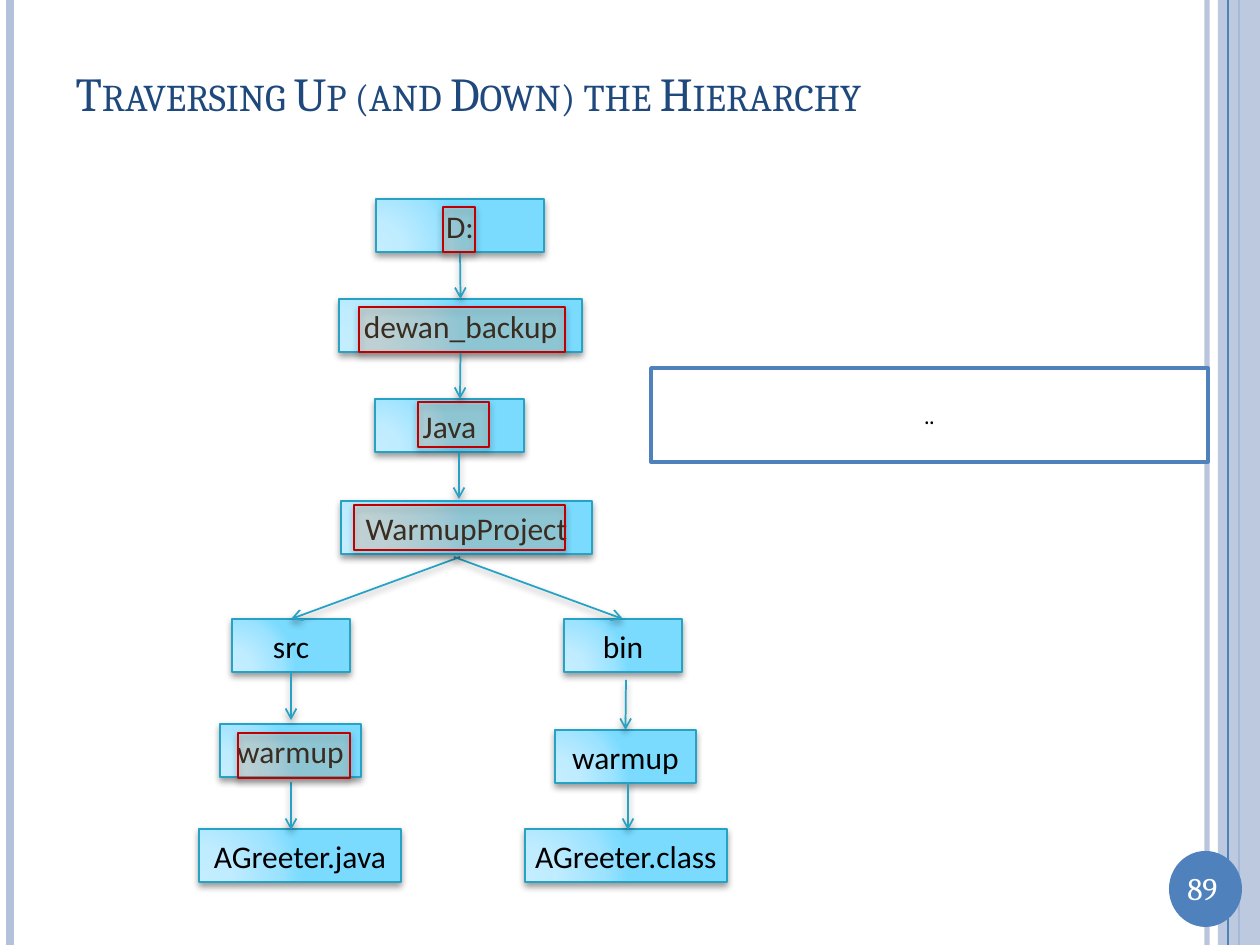
from lxml import etree
from pptx import Presentation
from pptx.dml.color import RGBColor
from pptx.enum.shapes import MSO_CONNECTOR, MSO_SHAPE
from pptx.enum.text import MSO_ANCHOR, MSO_AUTO_SIZE, PP_ALIGN
from pptx.oxml import parse_xml
from pptx.oxml.ns import qn
from pptx.util import Emu, Pt

STRAIGHT = MSO_CONNECTOR.STRAIGHT
RECTANGLE = MSO_SHAPE.RECTANGLE
OVAL = MSO_SHAPE.OVAL
MIDDLE = MSO_ANCHOR.MIDDLE
CENTER = PP_ALIGN.CENTER
LEFT = PP_ALIGN.LEFT
NO_AUTOFIT = MSO_AUTO_SIZE.NONE

WHITE = RGBColor(0xFF, 0xFF, 0xFF)
BLACK = RGBColor(0, 0, 0)
NAVY = RGBColor(0x1F, 0x49, 0x7D)
BLUE = RGBColor(0x4F, 0x81, 0xBD)
PALE_BLUE = RGBColor(0xB3, 0xC1, 0xDB)
TEAL = RGBColor(0x26, 0xA2, 0xC4)
PEACH = RGBColor(0xFA, 0xC0, 0x90)
RED = RGBColor(0xC0, 0, 0)
NODE_STOPS = [
    (0, RGBColor(0xC4, 0xEE, 0xFF)),
    (30, RGBColor(0xBF, 0xEC, 0xFF)),
    (75, RGBColor(0x9D, 0xE3, 0xFF)),
    (100, RGBColor(0x7A, 0xDB, 0xFF)),
]

HEADING_FONT = "Cambria"
NODE_FONT = "Calibri"
EMU_PER_PX = 914400 / 126
SLIDE_WIDTH, SLIDE_HEIGHT = 1260, 945
NODE_HEIGHT = 53
HIGHLIGHT_HEIGHT = 45
DRAWING_NS = 'xmlns:a="http://schemas.openxmlformats.org/drawingml/2006/main"'

EDGE_LINES = [
    (1207, PALE_BLUE, 3, 93),
    (10, PALE_BLUE, 4.5, 100),
    (1239, BLUE, 1.5, 100),
]
NODES = {
    "drive": ("D:", 376, 199, 168),
    "backup": ("dewan_backup", 339, 299, 243),
    "java": ("Java", 375, 399, 149),
    "src": ("src", 232, 619, 118),
    "src_package": ("warmup", 220, 724, 141),
    "source_file": ("AGreeter.java", 199, 829, 202),
    "class_file": ("AGreeter.class", 525, 829, 202),
    "bin_package": ("warmup", 555, 730, 141),
    "bin": ("bin", 564, 619, 118),
}
PROJECT = ("WarmupProject", 341, 501, 251)
ARROWS = [
    ((460, 251), (460, 299), "drive", "backup"),
    ((460, 352), (460, 399), "backup", None),
    ((459, 451), (459, 499), None, None),
    ((460, 557), (291, 619), None, "src"),
    ((454, 557), (623, 619), None, "bin"),
    ((291, 672), (291, 720), "src", None),
    ((626, 680), (626, 729), None, "bin_package"),
    ((291, 782), (291, 830), None, None),
    ((628, 782), (628, 830), None, None),
]
HIGHLIGHTS = [
    (443, 207, 32),
    (359, 307, 206),
    (418, 402, 71),
    (354, 505, 211),
    (238, 733, 112),
]


def px(value):
    return Emu(round(value * EMU_PER_PX))


def set_alpha(color_format_parent, percent):
    color = color_format_parent.find(".//" + qn("a:srgbClr"))
    etree.SubElement(color, qn("a:alpha")).set("val", str(percent * 1000))


def add_effects(shape, shadow):
    effects = etree.SubElement(shape._element.spPr, qn("a:effectLst"))
    if shadow:
        effects.append(parse_xml(
            f'<a:outerShdw {DRAWING_NS} blurRad="50800" dist="25400" dir="5400000" '
            'rotWithShape="0"><a:srgbClr val="000000"><a:alpha val="40000"/>'
            '</a:srgbClr></a:outerShdw>'))


def fill_node(shape):
    stops = "".join(
        f'<a:gs pos="{position * 1000}"><a:srgbClr val="{color}"/></a:gs>'
        for position, color in NODE_STOPS)
    shape._element.spPr.append(parse_xml(
        f'<a:gradFill {DRAWING_NS} rotWithShape="1"><a:gsLst>{stops}</a:gsLst>'
        '<a:path path="circle"><a:fillToRect l="5000" t="100000" r="120000" b="10000"/>'
        '</a:path></a:gradFill>'))


def add_box(page, kind, left, top, width, height, fill=None, alpha=100,
            line=None, weight=1, shadow=False):
    box = page.shapes.add_shape(kind, px(left), px(top), px(width), px(height))
    if fill is None:
        fill_node(box)
    else:
        box.fill.solid()
        box.fill.fore_color.rgb = fill
        if alpha < 100:
            set_alpha(box._element.spPr.find(qn("a:solidFill")), alpha)
    if line is None:
        box.line.fill.background()
    else:
        box.line.color.rgb = line
        box.line.width = Pt(weight)
    add_effects(box, shadow)
    return box


def add_line(page, start, end, color, weight, alpha=100, shadow=False):
    line = page.shapes.add_connector(
        STRAIGHT, px(start[0]), px(start[1]), px(end[0]), px(end[1]))
    line.line.color.rgb = color
    line.line.width = Pt(weight)
    if alpha < 100:
        set_alpha(line.line._get_or_add_ln(), alpha)
    add_effects(line, shadow)
    return line


def write_text(box, text, font, size, color, align=CENTER):
    frame = box.text_frame
    frame.word_wrap = True
    frame.auto_size = NO_AUTOFIT
    frame.vertical_anchor = MIDDLE
    para = frame.paragraphs[0]
    para.alignment = align
    span = para.add_run()
    span.text = text
    span.font.name = font
    span.font.size = Pt(size)
    span.font.color.rgb = color
    return span


def add_node(page, text, left, top, width):
    node = add_box(page, RECTANGLE, left, top, width, NODE_HEIGHT, line=TEAL, shadow=True)
    frame = node.text_frame
    frame.margin_left = frame.margin_right = px(6)
    frame.margin_top = frame.margin_bottom = px(6)
    write_text(node, text, NODE_FONT, 18, BLACK)
    return node


def add_arrow(page, nodes, start, end, source, target):
    arrow = add_line(page, start, end, TEAL, 1, shadow=True)
    etree.SubElement(arrow.line._get_or_add_ln(), qn("a:tailEnd")).set("type", "arrow")
    if source:
        arrow.begin_connect(nodes[source], 2)
    if target:
        arrow.end_connect(nodes[target], 0)


def add_frame(page):
    for x, color, weight, alpha in EDGE_LINES:
        add_line(page, (x, 0), (x, SLIDE_HEIGHT), color, weight, alpha)
    add_box(page, RECTANGLE, 1218, 0, 42, SLIDE_HEIGHT, PALE_BLUE, 87)
    add_line(page, (1228, 0), (1228, SLIDE_HEIGHT), BLUE, 0.75)
    add_box(page, OVAL, 1169, 851, 73, 76, BLUE)
    number = page.shapes.add_textbox(px(1166), px(863), px(73), px(50))
    write_text(number, "89", HEADING_FONT, 18, WHITE)


def add_title(page):
    title = page.shapes.title
    title.left, title.top = px(63), px(38)
    title.width, title.height = px(1092), px(110)
    span = write_text(title, "Traversing Up (and Down) the Hierarchy",
                      HEADING_FONT, 27, NAVY, LEFT)
    span.font._element.set("cap", "small")


def main():
    deck = Presentation()
    deck.slide_width, deck.slide_height = px(SLIDE_WIDTH), px(SLIDE_HEIGHT)
    page = deck.slides.add_slide(deck.slide_layouts[5])
    add_frame(page)
    add_title(page)
    command = add_box(page, RECTANGLE, 651, 368, 557, 94, WHITE, line=BLUE, weight=2)
    write_text(command, "..", HEADING_FONT, 14, BLACK)
    nodes = {name: add_node(page, *node) for name, node in NODES.items()}
    for arrow in ARROWS:
        add_arrow(page, nodes, *arrow)
    add_node(page, *PROJECT)
    for left, top, width in HIGHLIGHTS:
        add_box(page, RECTANGLE, left, top, width, HIGHLIGHT_HEIGHT, PEACH, 23,
                line=RED, shadow=True)
    deck.save("out.pptx")


if __name__ == "__main__":
    main()
